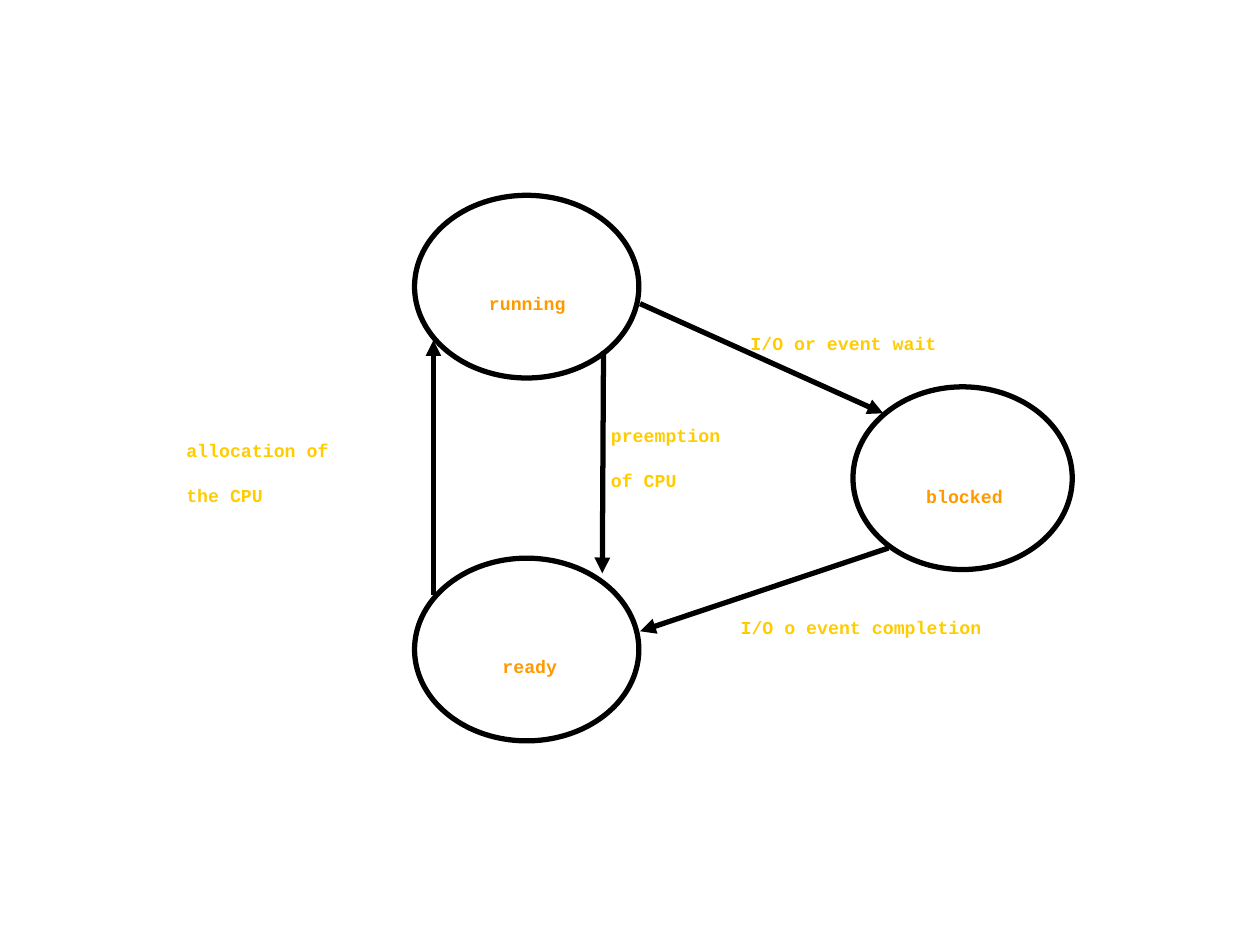
from dataclasses import dataclass

from lxml import etree
from pptx import Presentation
from pptx.dml.color import RGBColor
from pptx.enum.shapes import MSO_CONNECTOR, MSO_SHAPE
from pptx.enum.text import MSO_ANCHOR, PP_ALIGN
from pptx.oxml.ns import qn
from pptx.util import Inches, Pt

STRAIGHT = MSO_CONNECTOR.STRAIGHT
OVAL = MSO_SHAPE.OVAL
TOP = MSO_ANCHOR.TOP
LEFT, CENTER = PP_ALIGN.LEFT, PP_ALIGN.CENTER

COLORS = {"outline": "000000", "state": "FF9900", "transition": "FFCC00"}
FONT = "Courier New"
FONT_SIZE = Pt(10.4)
LINE_WIDTH = Pt(3)
PARAGRAPH_GAP = Pt(12.8)
TEXT_TOP = Inches(0.24)
STATE_HEIGHT = 1.45


@dataclass(frozen=True)
class Label:
    lines: tuple[str, ...]
    left: float
    top: float
    width: float
    height: float
    color: str = "transition"
    align: PP_ALIGN = CENTER


@dataclass(frozen=True)
class State:
    label: Label
    left: float
    top: float
    width: float


@dataclass(frozen=True)
class Transition:
    start: tuple[float, float]
    end: tuple[float, float]


TRANSITION_LABELS = (
    Label(("allocation of", "the CPU"), 1.38, 3.25, 2.61, 1.04, align=LEFT),
    Label(("preemption", "of CPU"), 4.75, 3.13, 2.53, 0.75, align=LEFT),
    Label(("I/O or event wait",), 5.42, 2.4, 2.55, 0.46),
    Label(("I/O o event completion",), 5.4, 4.65, 2.87, 0.46),
)
STATES = (
    State(Label(("blocked",), 6.81, 3.61, 1.69, 0.52, "state"), 6.77, 3.07, 1.74),
    State(Label(("running",), 2.96, 2.08, 2.45, 0.52, "state"), 3.29, 1.55, 1.78),
    State(Label(("ready",), 3.36, 4.96, 1.69, 0.52, "state"), 3.29, 4.43, 1.78),
)
TRANSITIONS = (
    Transition((3.44, 4.72), (3.44, 2.7)),
    Transition((4.79, 2.79), (4.78, 4.55)),
    Transition((7.05, 4.35), (5.08, 5.01)),
    Transition((5.08, 2.41), (7.01, 3.28)),
)


def rgb(name: str) -> RGBColor:
    return RGBColor.from_string(COLORS[name])


def style_line(line) -> None:
    line.color.rgb = rgb("outline")
    line.width = LINE_WIDTH


def draw_label(shapes, label: Label) -> None:
    box = shapes.add_textbox(
        Inches(label.left), Inches(label.top), Inches(label.width), Inches(label.height)
    )
    frame = box.text_frame
    frame.word_wrap = True
    frame.vertical_anchor = TOP
    frame.margin_top = TEXT_TOP
    for index, line in enumerate(label.lines):
        paragraph = frame.add_paragraph() if index else frame.paragraphs[0]
        paragraph.alignment = label.align
        if index:
            paragraph.space_before = PARAGRAPH_GAP
        run = paragraph.add_run()
        run.text = line
        run.font.name = FONT
        run.font.size = FONT_SIZE
        run.font.bold = True
        run.font.color.rgb = rgb(label.color)


def draw_state(shapes, state: State) -> None:
    draw_label(shapes, state.label)
    ellipse = shapes.add_shape(
        OVAL, Inches(state.left), Inches(state.top), Inches(state.width), Inches(STATE_HEIGHT)
    )
    ellipse.shadow.inherit = False
    ellipse.fill.background()
    style_line(ellipse.line)


def draw_transition(shapes, transition: Transition) -> None:
    """Draw a line with a triangular arrowhead at its end."""
    points = (Inches(value) for value in transition.start + transition.end)
    arrow = shapes.add_connector(STRAIGHT, *points)
    style_line(arrow.line)
    properties = arrow._element.spPr
    etree.SubElement(properties.find(qn("a:ln")), qn("a:tailEnd"), type="triangle")
    etree.SubElement(properties, qn("a:effectLst"))


def main() -> None:
    presentation = Presentation()
    presentation.slide_width = Inches(10)
    presentation.slide_height = Inches(7.5)
    shapes = presentation.slides.add_slide(presentation.slide_layouts[6]).shapes
    for label in TRANSITION_LABELS:
        draw_label(shapes, label)
    for state in STATES:
        draw_state(shapes, state)
    for transition in TRANSITIONS:
        draw_transition(shapes, transition)
    presentation.save("out.pptx")


if __name__ == "__main__":
    main()
